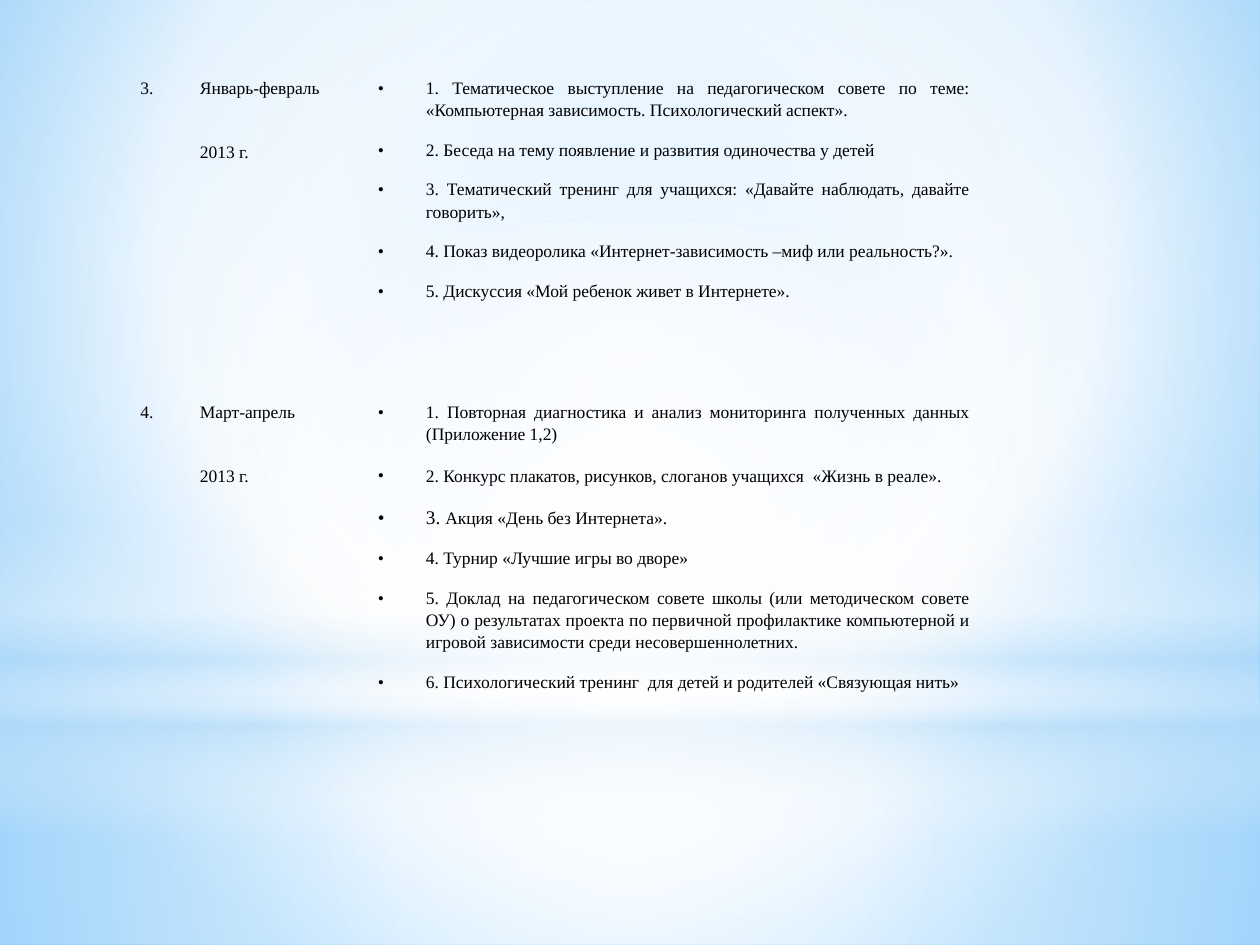
from lxml import etree
from pptx import Presentation
from pptx import util as u
from pptx.dml.color import RGBColor
from pptx.enum import shapes, text
from pptx.oxml.ns import qn

SCALE = 914400 / 126
FONT = "Times New Roman"
PLAIN = "{2D5ABB26-0587-4C30-8999-92F81FD0307C}"
BOX, OVAL = shapes.MSO_SHAPE.RECTANGLE, shapes.MSO_SHAPE.OVAL
MID = (50, 50, 50, 50)

# Paragraph formats by column
DATE = {"alignment": text.PP_ALIGN.JUSTIFY, "line_spacing": 1.15,
        "space_before": u.Pt(12), "space_after": u.Pt(12)}
NUM = {**DATE, "alignment": text.PP_ALIGN.CENTER}
TASK = {**DATE, "space_before": u.Pt(0), "space_after": u.Pt(10)}

# Gradient stops: position, colour, opacity in percent
BACK = [(0, "9ED5FF", 100), (60, "FFFFFF", 100), (100, "5BB9FF", 100)]
LAYERS = [
    (BOX, (0, 703, 1260, 242), MID,
     [(0, "FFFFFF", 91), (37, "FFFFFF", 76), (100, "B4DCFA", 79)]),
    (BOX, (0, 0, 1260, 703), MID,
     [(0, "FFFFFF", 89), (48, "FFFFFF", 62), (100, "B4DCFA", 79)]),
    (BOX, (0, 519, 1260, 315), None,
     [(0, "FFFFFF", 0), (29, "FFFFFF", 30), (45, "B4DCFA", 40),
      (55, "FFFFFF", 26), (65, "B4DCFA", 60), (100, "FFFFFF", 0)]),
    (OVAL, (0, 220, 1260, 703), MID,
     [(0, "FFFFFF", 100), (56, "FFFFFF", 0)]),
]

# Plan rows: number, dates, tasks; a task is text or (text, size) runs
PLAN = [
    ("3.", ["Январь-февраль", "2013 г."], [
        "1. Тематическое выступление на педагогическом совете по теме: "
        "«Компьютерная зависимость. Психологический аспект».",
        "2. Беседа на тему появление и развития одиночества у детей",
        "3. Тематический тренинг для учащихся: «Давайте наблюдать, "
        "давайте говорить», ",
        "4. Показ видеоролика «Интернет-зависимость –миф или реальность?». ",
        "5. Дискуссия «Мой ребенок живет в Интернете».",
    ]),
    ("4.", ["Март-апрель", "2013 г."], [
        "1. Повторная диагностика и анализ мониторинга полученных данных "
        "(Приложение 1,2)",
        [("2. Конкурс плакатов, рисунков, слоганов учащихся  "
          "«Жизнь в реале».", 10), (" ", 11)],
        [("3. ", 11), ("Акция «День без Интернета».  ", 10)],
        "4. Турнир «Лучшие игры во дворе»",
        "5. Доклад на педагогическом совете школы (или методическом совете "
        "ОУ) о результатах проекта по первичной профилактике компьютерной "
        "и игровой зависимости среди несовершеннолетних.",
        "6. Психологический тренинг  для детей и родителей «Связующая нить»",
    ]),
]


def px(n):
    return u.Emu(round(n * SCALE))


def rgb(code):
    return RGBColor.from_string(code)


def apply(obj, props):
    for name, val in props.items():
        setattr(obj, name, val)


def add(parent, tag, **attrs):
    node = etree.SubElement(parent, qn(tag))
    for name, val in attrs.items():
        node.set(name, str(val))
    return node


def shade(fill, parent, stops, focus):
    """Gradient fill: circular around focus, or downward without one."""
    fill.gradient()
    grad = parent.find(qn("a:gradFill"))
    for node in list(grad):
        grad.remove(node)
    grad.set("rotWithShape", "1")
    group = add(grad, "a:gsLst")
    for pos, code, alpha in stops:
        stop = add(group, "a:gs", pos=pos * 1000)
        tint = add(stop, "a:srgbClr", val=code)
        if alpha < 100:
            add(tint, "a:alpha", val=alpha * 1000)
    if focus:
        ring = add(grad, "a:path", path="circle")
        sides = {k: v * 1000 for k, v in zip("ltrb", focus)}
        add(ring, "a:fillToRect", **sides)
    else:
        add(grad, "a:lin", ang=5400000, scaled=0)


def backdrop(slide):
    fill = slide.background.fill
    fill.gradient()
    props = slide.element.find(".//" + qn("p:bgPr"))
    shade(fill, props, BACK, (20, 10, 20, 60))
    for kind, box, focus, stops in LAYERS:
        shape = slide.shapes.add_shape(kind, *map(px, box))
        shape.shadow.inherit = False
        shape.line.fill.background()
        shade(shape.fill, shape.element.spPr, stops, focus)


def bullet(para):
    props = para._p.get_or_add_pPr()
    props.set("marL", str(px(48)))
    props.set("indent", str(-px(48)))
    add(props, "a:buFont", typeface=FONT)
    add(props, "a:buChar", char="•")
    add(add(props, "a:tabLst"), "a:tab", pos=px(63), algn="l")


def write(cell, items, form):
    frame = cell.text_frame
    for i, item in enumerate(items):
        para = frame.add_paragraph() if i else frame.paragraphs[0]
        apply(para, form)
        if form is TASK:
            bullet(para)
        runs = [(item, 10)] if isinstance(item, str) else item
        for words, size in runs:
            run = para.add_run()
            run.text = words
            apply(run.font, {"name": FONT, "size": u.Pt(size)})
            run.font.color.rgb = rgb("000000")


def schedule(slide, box, cols, rows):
    frame = slide.shapes.add_table(len(rows), len(cols), *map(px, box))
    table = frame.table
    apply(table, {"first_row": False, "horz_banding": False})
    table._tbl.tblPr.find(qn("a:tableStyleId")).text = PLAIN
    for col, width in zip(table.columns, cols):
        col.width = px(width)
    for row, height in zip(table.rows, rows):
        row.height = px(height)
    for cell in table.iter_cells():
        cell.fill.background()
        apply(cell, {"margin_" + side: 0
                     for side in ("left", "top", "right", "bottom")})
    for r, (num, dates, tasks) in enumerate(PLAN):
        parts = [([num], NUM), (dates, DATE), (tasks, TASK)]
        for c, (items, form) in enumerate(parts):
            write(table.cell(r, c), items, form)


def main():
    deck = Presentation()
    apply(deck, {"slide_width": px(1260), "slide_height": px(945)})
    slide = deck.slides.add_slide(deck.slide_layouts[6])
    backdrop(slide)
    schedule(slide, (94, 76, 1071, 744), (106, 178, 591, 196), (324, 420))
    deck.save("out.pptx")


if __name__ == "__main__":
    main()
